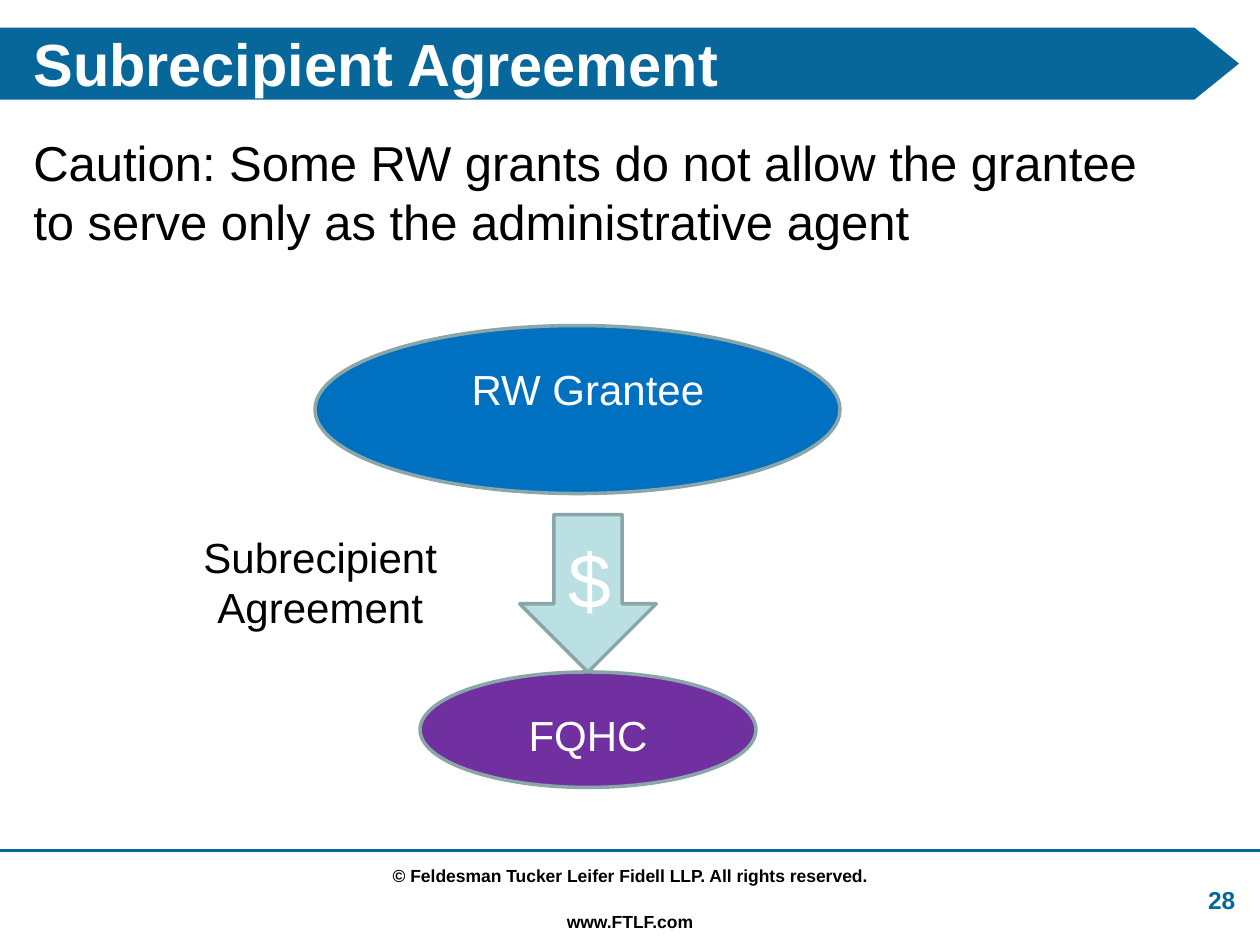
from dataclasses import dataclass

from lxml import etree
from pptx import Presentation
from pptx.dml.color import RGBColor
from pptx.enum.shapes import MSO_CONNECTOR, MSO_SHAPE
from pptx.enum.text import MSO_ANCHOR, MSO_AUTO_SIZE, PP_ALIGN
from pptx.oxml.ns import qn
from pptx.util import Inches, Pt

STRAIGHT = MSO_CONNECTOR.STRAIGHT
PENTAGON, OVAL, DOWN_ARROW = MSO_SHAPE.PENTAGON, MSO_SHAPE.OVAL, MSO_SHAPE.DOWN_ARROW
LEFT, CENTER, RIGHT = PP_ALIGN.LEFT, PP_ALIGN.CENTER, PP_ALIGN.RIGHT
TOP, MIDDLE, BOTTOM = MSO_ANCHOR.TOP, MSO_ANCHOR.MIDDLE, MSO_ANCHOR.BOTTOM
NO_AUTOFIT = MSO_AUTO_SIZE.NONE
COLUMNS, ROWS = 120, 90
TITLE_ONLY = 5


@dataclass(frozen=True)
class Theme:
    font: str = "Arial"
    brand: str = "08679A"
    white: str = "FFFFFF"
    black: str = "000000"
    grantee: str = "0070C0"
    center: str = "7030A0"
    arrow: str = "BBE0E3"
    outline: str = "8AA6A8"
    title_size: int = 34
    body_size: int = 28
    label_size: int = 24
    dollar_size: int = 44
    footer_size: int = 10
    number_size: int = 14
    outline_width: float = 2
    rule_width: float = 1.5


class SlideBuilder:
    def __init__(self, presentation, theme):
        self.theme = theme
        self.column = presentation.slide_width / COLUMNS
        self.row = presentation.slide_height / ROWS
        self.slide = presentation.slides.add_slide(presentation.slide_layouts[TITLE_ONLY])

    def place(self, left, top, width, height):
        return (round(left * self.column), round(top * self.row),
                round(width * self.column), round(height * self.row))

    def set_text(self, shape, text, size, color, bold=False, align=LEFT, anchor=TOP):
        frame = shape.text_frame
        frame.text = text
        frame.word_wrap = True
        frame.auto_size = NO_AUTOFIT
        frame.vertical_anchor = anchor
        paragraph = frame.paragraphs[0]
        paragraph.alignment = align
        font = paragraph.font
        font.name = self.theme.font
        font.size = Pt(size)
        font.bold = bold
        font.color.rgb = RGBColor.from_string(color)

    def title(self, text, *area):
        shape = self.slide.shapes.title
        shape.left, shape.top, shape.width, shape.height = self.place(*area)
        self.set_text(shape, text, self.theme.title_size, self.theme.white, True, anchor=BOTTOM)

    def text(self, text, area, size, color, **style):
        shape = self.slide.shapes.add_textbox(*self.place(*area))
        self.set_text(shape, text, size, color, **style)

    def shape(self, kind, area, fill, outlined=True):
        shape = self.slide.shapes.add_shape(kind, *self.place(*area))
        shape.shadow.inherit = False
        shape.fill.solid()
        shape.fill.fore_color.rgb = RGBColor.from_string(fill)
        if outlined:
            shape.line.color.rgb = RGBColor.from_string(self.theme.outline)
            shape.line.width = Pt(self.theme.outline_width)
        else:
            shape.line.fill.background()
        return shape

    def banner(self, *area):
        shape = self.shape(PENTAGON, area, self.theme.brand, outlined=False)
        shape.adjustments[0] = 0.62
        self.slide.shapes.title.element.addprevious(shape.element)

    def rule(self, row):
        left, top, width, _ = self.place(0, row, COLUMNS, 0)
        line = self.slide.shapes.add_connector(STRAIGHT, left, top, left + width, top)
        line.line.color.rgb = RGBColor.from_string(self.theme.brand)
        line.line.width = Pt(self.theme.rule_width)
        etree.SubElement(line.element.spPr, qn("a:effectLst"))


def main():
    presentation = Presentation()
    presentation.slide_width, presentation.slide_height = Inches(10), Inches(7.5)
    theme = Theme()
    builder = SlideBuilder(presentation, theme)

    builder.banner(0, 2.64, 118, 6.84)
    builder.title("Subrecipient Agreement", 2, 2, 112, 8)
    builder.text("Caution: Some RW grants do not allow the grantee to serve only as the "
                 "administrative agent", (2, 12, 112, 14), theme.body_size, theme.black)

    builder.shape(OVAL, (30, 31, 50, 16), theme.grantee)
    builder.shape(DOWN_ARROW, (49.5, 49, 13, 15), theme.arrow)
    builder.shape(OVAL, (40, 64, 32, 11), theme.center)

    for text, area, color in (
        ("RW Grantee", (38.5, 34, 35, 6), theme.white),
        ("Subrecipient Agreement", (16, 50, 29, 11), theme.black),
        ("FQHC", (45, 67, 22, 6), theme.white),
    ):
        builder.text(text, area, theme.label_size, color, align=CENTER)
    builder.text("$", (53, 50, 4, 10), theme.dollar_size, theme.white)

    builder.rule(81)
    for text, area, anchor in (
        ("© Feldesman Tucker Leifer Fidell LLP. All rights reserved.",
         (29.5, 81.84, 61, 3.24), TOP),
        ("www.FTLF.com", (48, 86.16, 24, 3.24), MIDDLE),
    ):
        builder.text(text, area, theme.footer_size, theme.black,
                     bold=True, align=CENTER, anchor=anchor)
    builder.text("28", (111.84, 82.56, 7, 6.24), theme.number_size, theme.brand,
                 bold=True, align=RIGHT, anchor=MIDDLE)

    presentation.save("out.pptx")


if __name__ == "__main__":
    main()
